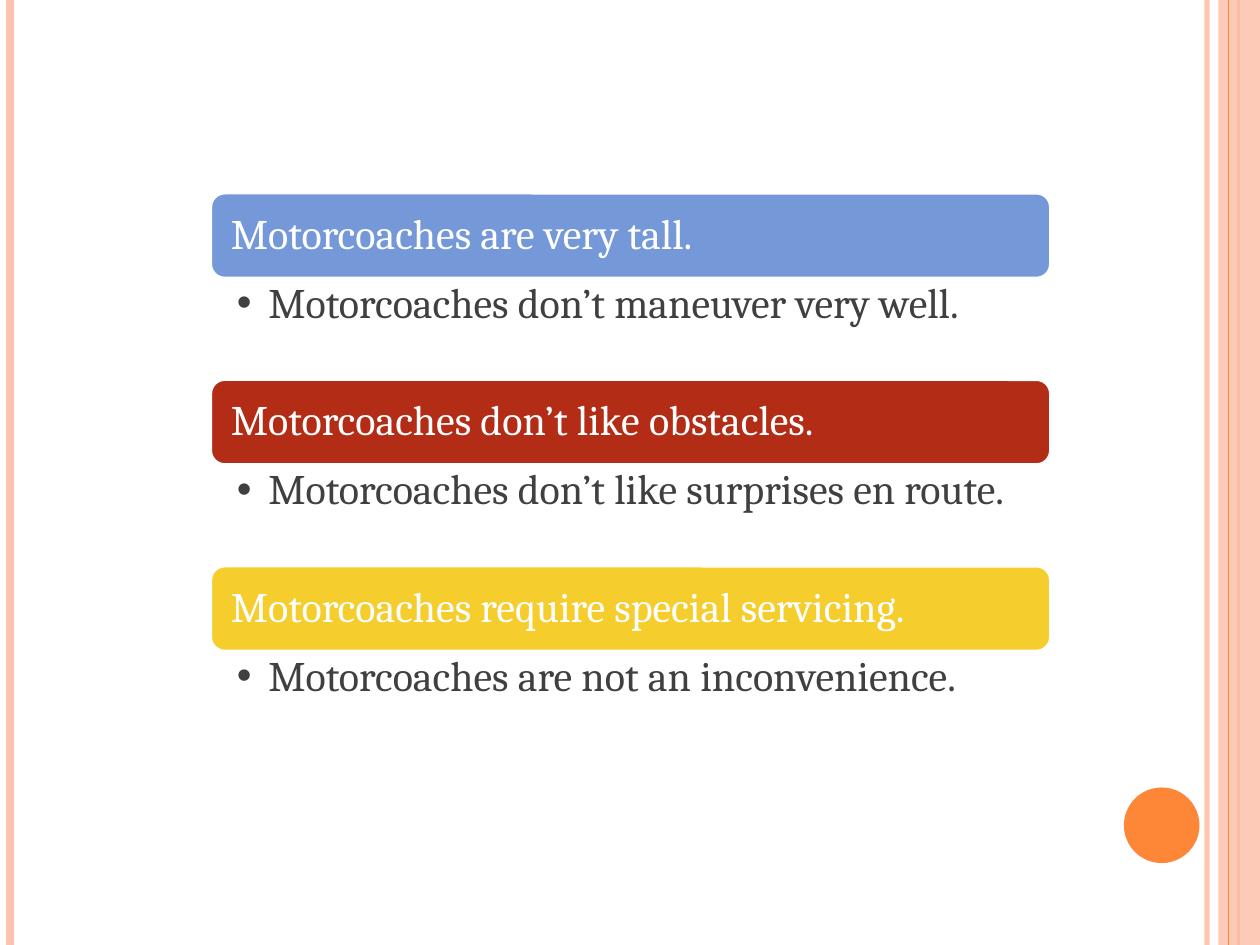
from typing import NamedTuple

from lxml.etree import SubElement
from pptx import Presentation
from pptx.dml.color import RGBColor
from pptx.enum.shapes import MSO_CONNECTOR, MSO_SHAPE
from pptx.enum.text import MSO_ANCHOR, PP_ALIGN
from pptx.oxml.ns import qn
from pptx.util import Emu, Pt

PX = 9144  # 100 px to the inch
SLIDE_W, SLIDE_H = 1000, 750

PEACH = RGBColor(0xFE, 0xC3, 0xAE)
ORANGE = RGBColor(0xFE, 0x86, 0x37)
BLUE = RGBColor(0x75, 0x98, 0xD9)
RED = RGBColor(0xB3, 0x2C, 0x16)
YELLOW = RGBColor(0xF5, 0xCD, 0x2D)
WHITE = RGBColor(0xFF, 0xFF, 0xFF)
GRAY = RGBColor(0x40, 0x40, 0x40)

LIST_X, LIST_Y, LIST_W = 167, 153, 667
HEAD_H, BODY_H = 68, 80
HEAD_INSETS = (13, 13, 13, 13)
BODY_INSETS = (21, 3, 19, 3)


class Stripe(NamedTuple):
    x: int
    color: RGBColor
    weight: float
    opacity: int = 100


class Topic(NamedTuple):
    heading: str
    detail: str
    color: RGBColor


BACK_STRIPES = (
    Stripe(958, PEACH, 3, 93),
    Stripe(8, PEACH, 4.5),
    Stripe(983, ORANGE, 1.5),
)
FRONT_STRIPE = Stripe(975, ORANGE, 0.75)

TOPICS = (
    Topic("Motorcoaches are very tall.",
          "Motorcoaches don’t maneuver very well.", BLUE),
    Topic("Motorcoaches don’t like obstacles.",
          "Motorcoaches don’t like surprises en route.", RED),
    Topic("Motorcoaches require special servicing.",
          "Motorcoaches are not an inconvenience.", YELLOW),
)


def px(n: int) -> Emu:
    return Emu(n * PX)


def set_opacity(sp, percent: int) -> None:
    """Make the first solid colour of a shape or line see-through."""
    color = sp._element.spPr.find(".//" + qn("a:srgbClr"))
    SubElement(color, qn("a:alpha"), val=str(percent * 1000))


def add_stripe(slide, stripe: Stripe) -> None:
    line = slide.shapes.add_connector(
        MSO_CONNECTOR.STRAIGHT, px(stripe.x), 0, px(stripe.x), px(SLIDE_H))
    line.line.color.rgb = stripe.color
    line.line.width = Pt(stripe.weight)
    if stripe.opacity < 100:
        set_opacity(line, stripe.opacity)
    SubElement(line._element.spPr, qn("a:effectLst"))


def add_filled(slide, kind: MSO_SHAPE, x: int, y: int, w: int, h: int,
               color: RGBColor):
    sp = slide.shapes.add_shape(kind, px(x), px(y), px(w), px(h))
    sp.shadow.inherit = False
    sp.fill.solid()
    sp.fill.fore_color.rgb = color
    sp.line.fill.background()
    return sp


def write(sp, text: str, color: RGBColor, anchor: MSO_ANCHOR,
          insets: tuple[int, int, int, int]):
    tf = sp.text_frame
    left, top, right, bottom = map(px, insets)
    frame_format = {
        "word_wrap": True, "vertical_anchor": anchor,
        "margin_left": left, "margin_top": top,
        "margin_right": right, "margin_bottom": bottom,
    }
    for name, value in frame_format.items():
        setattr(tf, name, value)
    p = tf.paragraphs[0]
    p.alignment = PP_ALIGN.LEFT
    p.line_spacing = 0.9
    r = p.add_run()
    r.text = text
    for name, value in {"name": "Cambria", "size": Pt(24)}.items():
        setattr(r.font, name, value)
    r.font.color.rgb = color
    return p


def add_bullet(p) -> None:
    p.level = 1
    pPr = p._p.get_or_add_pPr()
    pPr.set("marL", str(px(25)))
    pPr.set("indent", str(px(-25)))
    SubElement(pPr, qn("a:buFont"), typeface="Arial")
    SubElement(pPr, qn("a:buChar"), char="•")


def add_topic(slide, topic: Topic, y: int) -> None:
    head = add_filled(slide, MSO_SHAPE.ROUNDED_RECTANGLE,
                      LIST_X, y, LIST_W, HEAD_H, topic.color)
    head.line.color.rgb = WHITE
    head.line.width = Pt(2)
    write(head, topic.heading, WHITE, MSO_ANCHOR.MIDDLE, HEAD_INSETS)

    body = slide.shapes.add_textbox(
        px(LIST_X), px(y + HEAD_H), px(LIST_W), px(BODY_H))
    add_bullet(write(body, topic.detail, GRAY, MSO_ANCHOR.TOP, BODY_INSETS))


def main() -> None:
    prs = Presentation()
    prs.slide_width, prs.slide_height = px(SLIDE_W), px(SLIDE_H)
    slide = prs.slides.add_slide(prs.slide_layouts[6])

    for stripe in BACK_STRIPES:
        add_stripe(slide, stripe)
    band = add_filled(slide, MSO_SHAPE.RECTANGLE, 967, 0, 33, SLIDE_H, PEACH)
    set_opacity(band, 87)
    add_stripe(slide, FRONT_STRIPE)
    add_filled(slide, MSO_SHAPE.OVAL, 892, 625, 60, 60, ORANGE)

    for i, topic in enumerate(TOPICS):
        add_topic(slide, topic, LIST_Y + i * (HEAD_H + BODY_H))

    prs.save("out.pptx")


if __name__ == "__main__":
    main()
